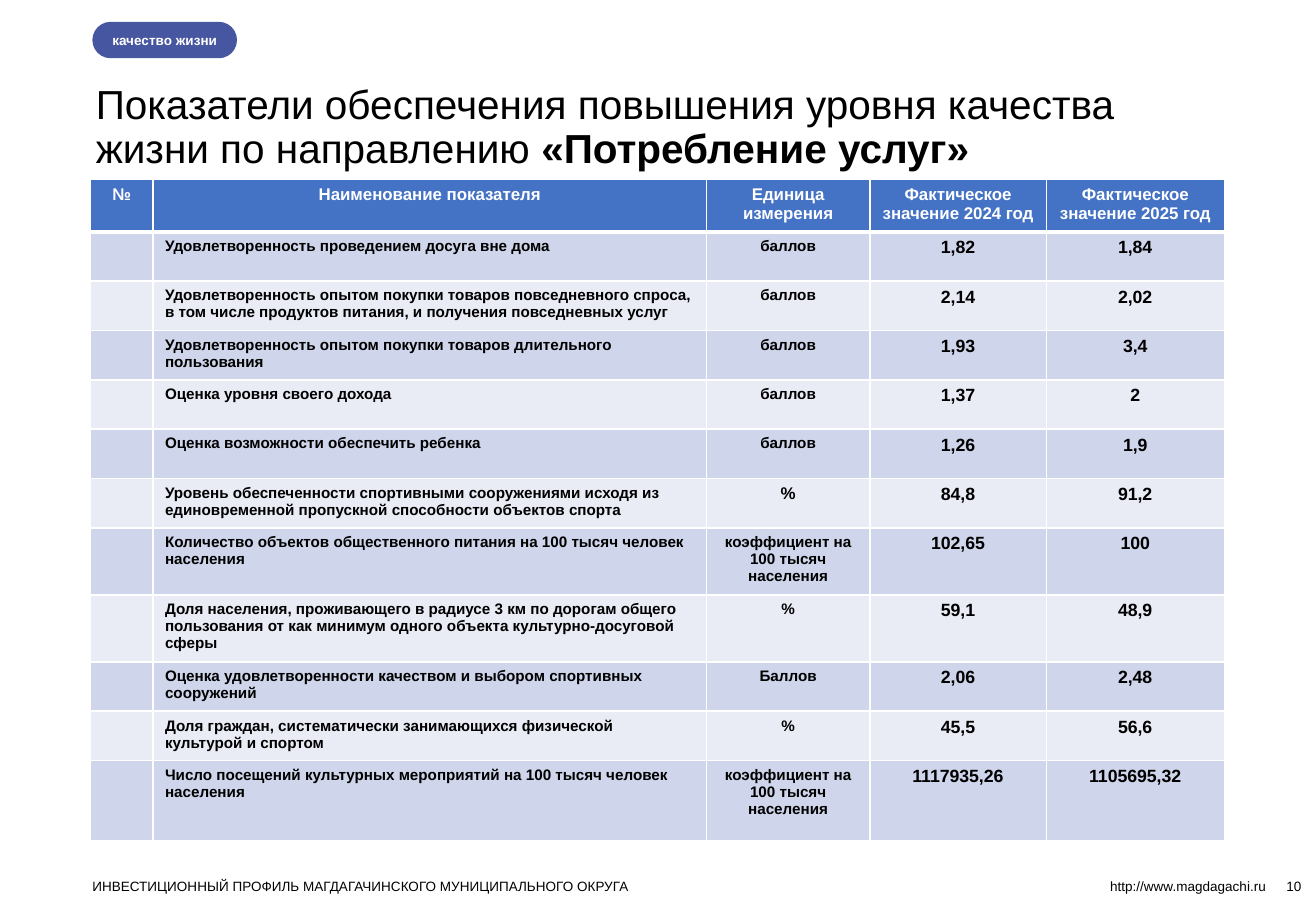
from lxml import etree
from pptx import Presentation
from pptx.dml.color import RGBColor
from pptx.enum.shapes import MSO_SHAPE
from pptx.enum.text import MSO_ANCHOR, PP_ALIGN
from pptx.oxml.ns import qn
from pptx.util import Inches, Pt

LEFT, CENTER, RIGHT = PP_ALIGN.LEFT, PP_ALIGN.CENTER, PP_ALIGN.RIGHT
TOP, MIDDLE, BOTTOM = MSO_ANCHOR.TOP, MSO_ANCHOR.MIDDLE, MSO_ANCHOR.BOTTOM
ROUNDED = MSO_SHAPE.ROUNDED_RECTANGLE

BLACK, WHITE, INDIGO = "000000", "FFFFFF", "4756A0"
HEADER_FILL, BAND_FILLS = "4472C4", ("CFD5EA", "E9EBF5")

# Lengths are percent of the slide's width and height
COLUMNS = [4.75, 42.06, 12.42, 13.41, 13.53]
ROW, TALL_ROW, LAST_ROW = 5.42, 6.95, 8.78
ROWS = [ROW] * 7 + [TALL_ROW] * 2 + [ROW] * 2 + [LAST_ROW]
FOOTER_TOP, FOOTER_HEIGHT = 96.4, 1.73

HEADERS = ["№", "Наименование показателя", "Единица измерения",
           "Фактическое значение 2024 год", "Фактическое значение 2025 год"]
POINTS, PERCENT = "баллов", "%"
RATIO = "коэффициент на 100 тысяч населения"
INDICATORS = [
    ("Удовлетворенность проведением досуга вне дома", POINTS, "1,82", "1,84"),
    ("Удовлетворенность опытом покупки товаров повседневного спроса, в том числе "
     "продуктов питания, и получения повседневных услуг", POINTS, "2,14", "2,02"),
    ("Удовлетворенность опытом покупки товаров длительного пользования",
     POINTS, "1,93", "3,4"),
    ("Оценка уровня своего дохода", POINTS, "1,37", "2"),
    ("Оценка возможности обеспечить ребенка", POINTS, "1,26", "1,9"),
    ("Уровень обеспеченности спортивными сооружениями исходя из единовременной "
     "пропускной способности объектов спорта", PERCENT, "84,8", "91,2"),
    ("Количество объектов общественного питания на 100 тысяч человек населения",
     RATIO, "102,65", "100"),
    ("Доля населения, проживающего в радиусе 3 км по дорогам общего пользования "
     "от как минимум одного объекта культурно-досуговой сферы",
     PERCENT, "59,1", "48,9"),
    ("Оценка удовлетворенности качеством и выбором спортивных сооружений",
     "Баллов", "2,06", "2,48"),
    ("Доля граждан, систематически занимающихся физической культурой и спортом",
     PERCENT, "45,5", "56,6"),
    ("Число посещений культурных мероприятий на 100 тысяч человек населения",
     RATIO, "1117935,26", "1105695,32"),
]
CELL_FORMATS = [(9, CENTER), (9, LEFT), (9, CENTER), (10.5, CENTER), (10.5, CENTER)]


def color(value):
    return RGBColor.from_string(value)


class SlideBuilder:
    font_name = "Arial"

    def __init__(self, presentation):
        self.width, self.height = presentation.slide_width, presentation.slide_height
        self.slide = presentation.slides.add_slide(presentation.slide_layouts[6])

    def across(self, share):
        return round(self.width * share / 100)

    def down(self, share):
        return round(self.height * share / 100)

    def place(self, left, top, width, height):
        return self.across(left), self.down(top), self.across(width), self.down(height)

    def add_runs(self, frame, runs, size, ink=BLACK, align=LEFT, spacing=None):
        """Fill the first paragraph with (text, bold) runs."""
        paragraph = frame.paragraphs[0]
        paragraph.alignment = align
        if spacing:
            paragraph.line_spacing = spacing
        for text, bold in runs:
            run = paragraph.add_run()
            run.text = text
            formats = {"name": self.font_name, "size": Pt(size), "bold": bold}
            for name, value in formats.items():
                setattr(run.font, name, value)
            run.font.color.rgb = color(ink)

    def frame(self, shape, anchor, insets):
        formats = {"word_wrap": True, "vertical_anchor": anchor}
        sides = ("left", "top", "right", "bottom")
        formats.update({f"margin_{side}": Inches(inset)
                        for side, inset in zip(sides, insets)})
        for name, value in formats.items():
            setattr(shape.text_frame, name, value)
        return shape.text_frame

    def text(self, box, runs, size, anchor=TOP, insets=(0, 0, 0, 0), **formats):
        shape = self.slide.shapes.add_textbox(*self.place(*box))
        self.add_runs(self.frame(shape, anchor, insets), runs, size, **formats)

    def pill(self, box, label, fill):
        shape = self.slide.shapes.add_shape(ROUNDED, *self.place(*box))
        shape.adjustments[0] = 0.5
        shape.shadow.inherit = False
        shape.fill.solid()
        shape.fill.fore_color.rgb = color(fill)
        shape.line.fill.background()
        frame = self.frame(shape, MIDDLE, (0.12, 0, 0, 0))
        self.add_runs(frame, [(label, True)], 8, WHITE)

    def borders(self, cell, widths):
        """Draw white borders in the order left, right, top, bottom."""
        properties = cell._tc.get_or_add_tcPr()
        for side, width in zip("LRTB", widths):
            line = etree.SubElement(properties, qn(f"a:ln{side}"), w=str(Pt(width)))
            fill = etree.SubElement(line, qn("a:solidFill"))
            etree.SubElement(fill, qn("a:srgbClr"), val=WHITE)

    def table(self, left, top):
        box = self.place(left, top, sum(COLUMNS), sum(ROWS))
        table = self.slide.shapes.add_table(len(ROWS), len(COLUMNS), *box).table
        table.horz_banding = False
        for column, share in zip(table.columns, COLUMNS):
            column.width = self.across(share)
        for row, share in zip(table.rows, ROWS):
            row.height = self.down(share)
        contents = [HEADERS] + [("", *indicator) for indicator in INDICATORS]
        for row_index, texts in enumerate(contents):
            header = row_index == 0
            fill = HEADER_FILL if header else BAND_FILLS[(row_index - 1) % 2]
            widths = (1, 1, 3 if row_index == 1 else 1, 3 if header else 1)
            for column_index, text in enumerate(texts):
                cell = table.cell(row_index, column_index)
                self.borders(cell, widths)
                cell.fill.solid()
                cell.fill.fore_color.rgb = color(fill)
                size, align = (10, CENTER) if header else CELL_FORMATS[column_index]
                if row_index == 6 and text == PERCENT:
                    size = 10
                if text:
                    self.add_runs(cell.text_frame, [(text, True)], size,
                                  WHITE if header else BLACK, align)


def main():
    presentation = Presentation()
    presentation.slide_width, presentation.slide_height = Inches(10.83), Inches(7.5)
    builder = SlideBuilder(presentation)
    builder.text((6.37, 4.4, 86.24, 19.33),
                 [("Показатели обеспечения повышения уровня качества жизни "
                   "по направлению ", False), ("«Потребление услуг»", True)],
                 24, MIDDLE, (0.1, 0.05, 0.1, 0.05), spacing=0.9)
    builder.table(6.87, 19.65)
    builder.pill((7.02, 2.4, 10.99, 4), "качество жизни", INDIGO)
    footers = [
        (7.02, 73.87, "ИНВЕСТИЦИОННЫЙ ПРОФИЛЬ МАГДАГАЧИНСКОГО МУНИЦИПАЛЬНОГО ОКРУГА",
         LEFT, TOP),
        (80.24, 15.97, "http://www.magdagachi.ru", RIGHT, TOP),
        (91.5, 7.39, "10", RIGHT, BOTTOM),
    ]
    for left, width, text, align, anchor in footers:
        builder.text((left, FOOTER_TOP, width, FOOTER_HEIGHT), [(text, False)], 8,
                     anchor, align=align)
    presentation.save("out.pptx")


if __name__ == "__main__":
    main()
